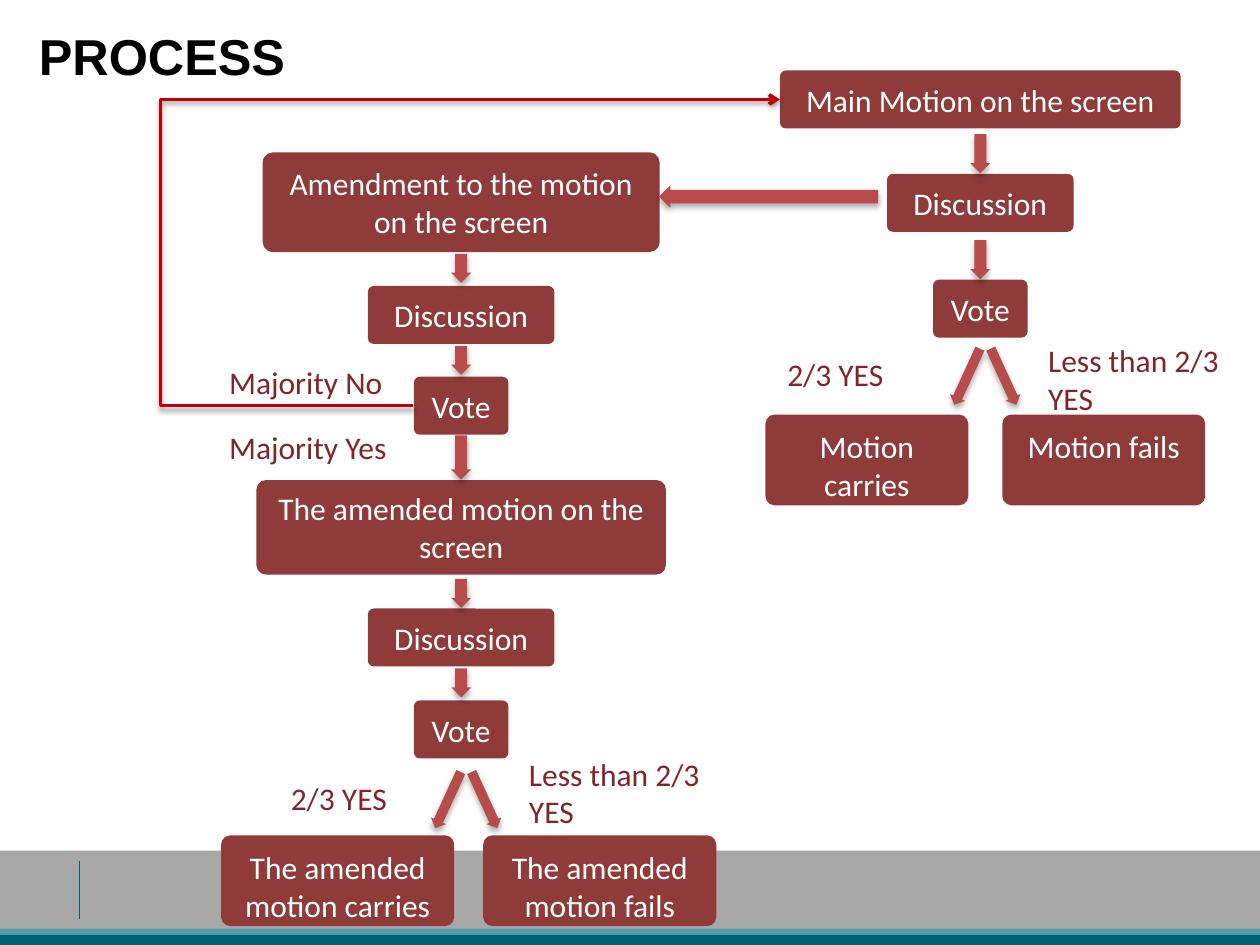
from dataclasses import dataclass

from lxml import etree
from pptx import Presentation
from pptx.dml.color import RGBColor
from pptx.enum.shapes import MSO_CONNECTOR, MSO_SHAPE
from pptx.enum.text import MSO_ANCHOR, PP_ALIGN
from pptx.oxml.ns import qn
from pptx.util import Inches, Pt

RECTANGLE = MSO_SHAPE.RECTANGLE
ROUNDED = MSO_SHAPE.ROUNDED_RECTANGLE
RIGHT_ARROW = MSO_SHAPE.RIGHT_ARROW
STRAIGHT = MSO_CONNECTOR.STRAIGHT
ELBOW = MSO_CONNECTOR.ELBOW
TOP, MIDDLE = MSO_ANCHOR.TOP, MSO_ANCHOR.MIDDLE
LEFT, CENTER = PP_ALIGN.LEFT, PP_ALIGN.CENTER


@dataclass(frozen=True)
class Theme:
    box = RGBColor.from_string("8E3B39")
    arrow = RGBColor.from_string("B74C4A")
    loop = RGBColor.from_string("C00000")
    label = RGBColor.from_string("802528")
    white = RGBColor.from_string("FFFFFF")
    black = RGBColor.from_string("000000")
    teal = RGBColor.from_string("005F71")
    light_teal = RGBColor.from_string("509DA7")
    gray = RGBColor.from_string("A9A8A9")
    title_font, body_font = "Arial", "Calibri"
    title_size, body_size = Pt(28.8), Pt(18)


theme = Theme()


def write(shape, text, color, align=LEFT, anchor=TOP, side=0.1, top=0.05):
    """Put one body-styled run in the shape and return its font."""
    frame = shape.text_frame
    frame.word_wrap = True
    frame.vertical_anchor = anchor
    frame.margin_left = frame.margin_right = Inches(side)
    frame.margin_top, frame.margin_bottom = Inches(top), Inches(0.05)
    paragraph = frame.paragraphs[0]
    paragraph.alignment = align
    run = paragraph.add_run()
    run.text = text
    run.font.name, run.font.size = theme.body_font, theme.body_size
    run.font.color.rgb = color
    return run.font


def set_shadow(properties, blur=0, distance=0, opacity=0):
    """Replace the inherited shadow with a downward one, or none if opacity is 0."""
    effects = etree.SubElement(properties, qn("a:effectLst"))
    if opacity:
        shadow = etree.SubElement(
            effects, qn("a:outerShdw"), blurRad=str(Pt(blur)),
            dist=str(Pt(distance)), dir="5400000", rotWithShape="0")
        color = etree.SubElement(shadow, qn("a:srgbClr"), val="000000")
        etree.SubElement(color, qn("a:alpha"), val=str(opacity * 1000))


presentation = Presentation()
presentation.slide_width, presentation.slide_height = Inches(10), Inches(7.5)
slide = presentation.slides.add_slide(presentation.slide_layouts[6])
shapes = slide.shapes

# Footer bands and divider
for left, top, width, height, color in [
    (-0.01, 7.37, 10.03, 0.15, theme.teal),
    (0, 6.75, 10, 0.62, theme.gray),
    (-0.01, 7.37, 10.03, 0.05, theme.light_teal),
]:
    band = shapes.add_shape(
        RECTANGLE, Inches(left), Inches(top), Inches(width), Inches(height))
    band.shadow.inherit = False
    band.fill.solid()
    band.fill.fore_color.rgb = color
    band.line.fill.background()

divider = shapes.add_connector(
    STRAIGHT, Inches(0.63), Inches(7.29), Inches(0.63), Inches(6.83))
divider.line.color.rgb = theme.teal
divider.line.width = Pt(0.75)
set_shadow(divider._element.spPr)

title = shapes.add_textbox(Inches(0.21), Inches(0.1), Inches(3.22), Inches(0.42))
title_font = write(title, "PROCESS", theme.black, top=0.1)
title_font.name, title_font.size = theme.title_font, theme.title_size
title_font.bold = True

# Steps: two columns, each centred on its own axis
MAIN_X, AMENDMENT_X = 7.78, 3.66
STEP_HEIGHT, OUTCOME_HEIGHT = 0.46, 0.72
DISCUSSION_WIDTH, VOTE_WIDTH = 1.48, 0.75
steps = [
    ("Main Motion on the screen", MAIN_X, 0.56, 3.18, STEP_HEIGHT),
    ("Discussion", MAIN_X, 1.38, DISCUSSION_WIDTH, STEP_HEIGHT),
    ("Vote", MAIN_X, 2.22, VOTE_WIDTH, STEP_HEIGHT),
    ("Amendment to the motion on the screen", AMENDMENT_X, 1.21, 3.15, 0.79),
    ("Discussion", AMENDMENT_X, 2.27, DISCUSSION_WIDTH, STEP_HEIGHT),
    ("Vote", AMENDMENT_X, 2.99, VOTE_WIDTH, STEP_HEIGHT),
    ("The amended motion on the screen", AMENDMENT_X, 3.81, 3.25, 0.75),
    ("Discussion", AMENDMENT_X, 4.83, DISCUSSION_WIDTH, STEP_HEIGHT),
    ("Vote", AMENDMENT_X, 5.56, VOTE_WIDTH, STEP_HEIGHT),
    ("Motion carries", 6.88, 3.29, 1.61, OUTCOME_HEIGHT),
    ("Motion fails", 8.76, 3.29, 1.61, OUTCOME_HEIGHT),
    ("The amended motion carries", 2.68, 6.63, 1.85, OUTCOME_HEIGHT),
    ("The amended motion fails", 4.76, 6.63, 1.85, OUTCOME_HEIGHT),
]
for text, center, top, width, height in steps:
    box = shapes.add_shape(ROUNDED, Inches(center - width / 2), Inches(top),
                           Inches(width), Inches(height))
    box.adjustments[0] = 0.1
    box.shadow.inherit = False
    box.fill.solid()
    box.fill.fore_color.rgb = theme.box
    box.line.fill.background()
    if height == OUTCOME_HEIGHT:
        write(box, text, theme.white, CENTER, TOP, top=0.08)
    else:
        write(box, text, theme.white, CENTER, MIDDLE, side=0.04)

# Vote results
for text, left, top, width, height in [
    ("Majority No", 1.72, 2.83, 1.62, 0.4),
    ("Majority Yes", 1.72, 3.35, 1.88, 0.4),
    ("2/3 YES", 6.15, 2.77, 1.17, 0.42),
    ("Less than 2/3 YES", 8.22, 2.66, 1.6, 0.71),
    ("2/3 YES", 2.21, 6.13, 1.17, 0.42),
    ("Less than 2/3 YES", 4.1, 5.94, 1.57, 0.71),
]:
    label = shapes.add_textbox(
        Inches(left), Inches(top), Inches(width), Inches(height))
    write(label, text, theme.label)

# Block arrows: centre x, centre y, length, thickness, rotation
arrows = [(6.1, 1.56, 1.74, 0.18, 180)]
for x, y, length in [
    (MAIN_X, 1.22, 0.31), (MAIN_X, 2.06, 0.31),
    (AMENDMENT_X, 2.13, 0.23), (AMENDMENT_X, 2.86, 0.23),
    (AMENDMENT_X, 3.63, 0.35), (AMENDMENT_X, 4.71, 0.23),
    (AMENDMENT_X, 5.42, 0.23),
]:
    arrows.append((x, y, length, 0.16, 90))
for fork_x, fork_y in [(7.82, 2.99), (3.7, 6.35)]:
    for side in (-1, 1):
        arrows.append(
            (fork_x + side * 0.145, fork_y, 0.49, 0.13, 90 - side * 24.6))

for x, y, length, thickness, rotation in arrows:
    arrow = shapes.add_shape(
        RIGHT_ARROW, Inches(x - length / 2), Inches(y - thickness / 2),
        Inches(length), Inches(thickness))
    arrow.adjustments[0], arrow.adjustments[1] = 0.6, 0.5
    arrow.rotation = rotation
    arrow.fill.solid()
    arrow.fill.fore_color.rgb = theme.arrow
    arrow.line.fill.background()
    set_shadow(arrow._element.spPr, 3.5, 2.2, 32)

# A majority "no" leads back to the main motion
loop = shapes.add_connector(
    ELBOW, Inches(3.28), Inches(3.22), Inches(6.19), Inches(0.79))
loop.line.color.rgb = theme.loop
loop.line.width = Pt(2)
etree.SubElement(loop.line._get_or_add_ln(), qn("a:tailEnd"), type="arrow")
bend = loop._element.spPr.find(qn("a:prstGeom")).get_or_add_avLst()
etree.SubElement(bend, qn("a:gd"), name="adj1", fmla="val -69000")
set_shadow(loop._element.spPr, 3.1, 1.6, 38)

presentation.save("out.pptx")
